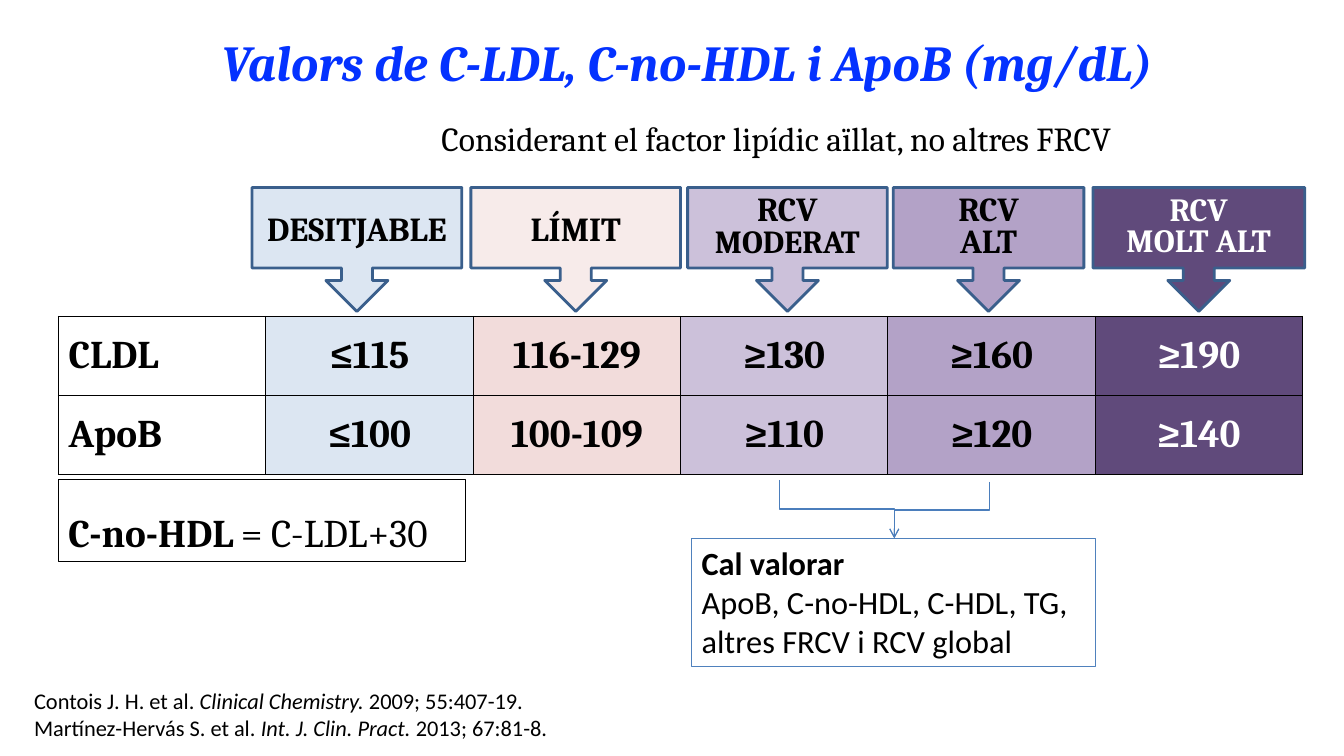
from dataclasses import dataclass

from lxml.etree import SubElement
from pptx import Presentation
from pptx.dml.color import RGBColor
from pptx.enum.shapes import MSO_CONNECTOR, MSO_SHAPE
from pptx.enum.text import MSO_ANCHOR, MSO_AUTO_SIZE, PP_ALIGN
from pptx.oxml.ns import qn
from pptx.util import Pt

EMU_PER_PX = 9144  # 100 px to the inch
TITLE_ONLY = 5


@dataclass(frozen=True)
class Theme:
    serif: str = "Cambria"
    sans: str = "Calibri"
    ink: str = "000000"
    paper: str = "FFFFFF"
    title: str = "0432FF"
    callout_line: str = "3A5F8C"
    note_line: str = "4F81BD"
    link: str = "4B7EBC"
    desirable: str = "DCE6F2"
    borderline: str = "F2DCDB"
    moderate: str = "CCC1DA"
    high: str = "B3A2C7"
    very_high: str = "604A7B"
    title_size: float = 36
    value_size: float = 28
    label_size: float = 24
    compact_size: float = 23
    note_size: float = 23.1
    source_size: float = 16


def px(length):
    return round(length * EMU_PER_PX)


def rgb(value):
    return RGBColor.from_string(value)


def write_text(frame, lines, *, font, size, color, bold=False, italic=False,
               align=PP_ALIGN.LEFT, anchor=MSO_ANCHOR.TOP, spacing=1.0, gap=0):
    """Write lines, each a list of (text, format changes) runs."""
    frame.word_wrap = True
    frame.auto_size = MSO_AUTO_SIZE.NONE
    frame.vertical_anchor = anchor
    for index, line in enumerate(lines):
        paragraph = frame.add_paragraph() if index else frame.paragraphs[0]
        paragraph.alignment = align
        paragraph.line_spacing = spacing
        paragraph.space_before = paragraph.space_after = Pt(gap)
        for text, changes in line:
            run = paragraph.add_run()
            run.text = text
            run.font.name = font
            run.font.size = Pt(changes.get("size", size))
            run.font.bold = changes.get("bold", bold)
            run.font.italic = changes.get("italic", italic)
            run.font.color.rgb = rgb(color)


class SlideBuilder:
    def __init__(self, slide, theme):
        self.slide = slide
        self.theme = theme

    def title(self, box, text):
        heading = self.slide.shapes.title
        heading.left, heading.top, heading.width, heading.height = map(px, box)
        write_text(heading.text_frame, [[(text, {})]], font=self.theme.serif,
                   size=self.theme.title_size, color=self.theme.title, bold=True,
                   italic=True, align=PP_ALIGN.CENTER, anchor=MSO_ANCHOR.MIDDLE,
                   spacing=0.9)

    def text(self, box, lines, **style):
        label = self.slide.shapes.add_textbox(*map(px, box))
        write_text(label.text_frame, lines, color=self.theme.ink, **style)

    def shape(self, kind, box, lines, *, line, line_width, fill=None, opacity=100,
              **style):
        panel = self.slide.shapes.add_shape(kind, *map(px, box))
        panel.shadow.inherit = False
        panel.line.color.rgb = rgb(line)
        panel.line.width = Pt(line_width)
        if fill:
            panel.fill.solid()
            panel.fill.fore_color.rgb = rgb(fill)
            if opacity < 100:
                color = panel.fill._xPr.find(qn("a:solidFill"))[0]
                SubElement(color, qn("a:alpha"), val=str(opacity * 1000))
        else:
            panel.fill.background()
        write_text(panel.text_frame, lines, **style)

    def callout(self, left, width, lines, fill, color, size, opacity=100, spacing=1.0):
        self.shape(MSO_SHAPE.DOWN_ARROW_CALLOUT, (left, 186, width, 123), lines,
                   line=self.theme.callout_line, line_width=2, fill=fill,
                   opacity=opacity, font=self.theme.serif, size=size, color=color,
                   bold=True, align=PP_ALIGN.CENTER, anchor=MSO_ANCHOR.MIDDLE,
                   spacing=spacing)

    def elbow_down(self, start, end):
        """Draw an elbow arrow that leaves and arrives vertically."""
        (x1, y1), (x2, y2) = start, end
        center_x, center_y = (x1 + x2) / 2, (y1 + y2) / 2
        half_run, half_drop = abs(x2 - x1) / 2, (y2 - y1) / 2
        side = 1 if x2 > x1 else -1
        link = self.slide.shapes.add_connector(
            MSO_CONNECTOR.ELBOW,
            px(center_x + side * half_drop), px(center_y - half_run),
            px(center_x - side * half_drop), px(center_y + half_run))
        link.line.color.rgb = rgb(self.theme.link)
        link.line.width = Pt(0.75)
        properties = link._element.spPr
        turn = 270 if side > 0 else 90
        properties.find(qn("a:xfrm")).set("rot", str(turn * 60000))
        SubElement(properties.find(qn("a:ln")), qn("a:tailEnd"), type="arrow")
        SubElement(properties, qn("a:effectLst"))

    def table(self, box, rows, fills, inks):
        left, top, width, height = box
        grid = self.slide.shapes.add_table(
            len(rows), len(fills), *map(px, box)).table
        grid.first_row = grid.horz_banding = False
        for column in grid.columns:
            column.width = px(width / len(fills))
        for row, values in zip(grid.rows, rows):
            row.height = px(height / len(rows))
            for index, (cell, value) in enumerate(zip(row.cells, values)):
                write_text(cell.text_frame, [[(value, {})]], font=self.theme.serif,
                           size=self.theme.value_size, color=inks[index], bold=True,
                           align=PP_ALIGN.CENTER if index else PP_ALIGN.LEFT, gap=6)
                cell.vertical_anchor = MSO_ANCHOR.MIDDLE
                self.cell_borders(cell)
                cell.fill.solid()
                cell.fill.fore_color.rgb = rgb(fills[index])

    def cell_borders(self, cell):
        properties = cell._tc.get_or_add_tcPr()
        for side in ("L", "R", "T", "B"):
            border = SubElement(properties, qn(f"a:ln{side}"), w=str(Pt(1)))
            paint = SubElement(border, qn("a:solidFill"))
            SubElement(paint, qn("a:srgbClr"), val=self.theme.ink)


def main():
    deck = Presentation()
    deck.slide_width, deck.slide_height = px(1333), px(750)
    theme = Theme()
    slide = deck.slides.add_slide(deck.slide_layouts[TITLE_ONLY])
    builder = SlideBuilder(slide, theme)

    builder.title((73, 32, 1217, 65), "Valors de C-LDL, C-no-HDL i ApoB (mg/dL)")
    builder.text((250, 112, 1040, 50),
                 [[("Considerant el factor lipídic aïllat, no altres FRCV", {})]],
                 font=theme.serif, size=theme.label_size, align=PP_ALIGN.CENTER)

    label = theme.label_size
    builder.callout(250, 208, [[("DESITJABLE", {})]], theme.desirable, theme.ink, label)
    builder.callout(467, 208, [[("LÍMIT", {})]], theme.borderline, theme.ink, label,
                    opacity=56)
    risk_levels = [
        (682, 198, "MODERAT", theme.moderate, theme.ink, label, theme.compact_size),
        (886, 189, "ALT", theme.high, theme.ink, label, label),
        (1084, 210, "MOLT ALT", theme.very_high, theme.paper, theme.note_size,
         theme.note_size),
    ]
    for left, width, level, fill, ink, size, level_size in risk_levels:
        builder.callout(left, width, [[("RCV", {})], [(level, {"size": level_size})]],
                        fill, ink, size, spacing=0.8)

    builder.table(
        (58, 314, 1234, 157),
        [("CLDL", "≤115", "116-129", "≥130", "≥160", "≥190"),
         ("ApoB", "≤100", "100-109", "≥110", "≥120", "≥140")],
        fills=(theme.paper, theme.desirable, theme.borderline, theme.moderate,
               theme.high, theme.very_high),
        inks=(theme.ink,) * 5 + (theme.paper,))

    builder.shape(MSO_SHAPE.RECTANGLE, (58, 476, 404, 81),
                  [[("C-no-HDL", {"bold": True}), (" ", {"size": label}),
                    ("= C-LDL+30", {})]],
                  line=theme.ink, line_width=1, font=theme.serif,
                  size=theme.value_size, color=theme.ink, spacing=1.5, gap=6)
    builder.shape(MSO_SHAPE.RECTANGLE, (686, 534, 401, 127),
                  [[("Cal valorar", {"bold": True})],
                   [("ApoB, C-no-HDL, C-HDL, TG,", {})],
                   [("altres FRCV i RCV global", {})]],
                  line=theme.note_line, line_width=0.75, font=theme.sans,
                  size=theme.note_size, color=theme.ink)
    for start in ((773, 476), (981, 478)):
        builder.elbow_down(start, (887, 534))

    sources = [("Contois J. H. et al. ", "Clinical Chemistry. ", "2009; 55:407-19."),
               ("Martínez-Hervás S. et al. ", "Int. J. Clin. Pract. ",
                "2013; 67:81-8.")]
    builder.text((24, 677, 693, 64),
                 [[(authors, {}), (journal, {"italic": True}), (issue, {})]
                  for authors, journal, issue in sources],
                 font=theme.sans, size=theme.source_size)

    deck.save("out.pptx")


if __name__ == "__main__":
    main()
